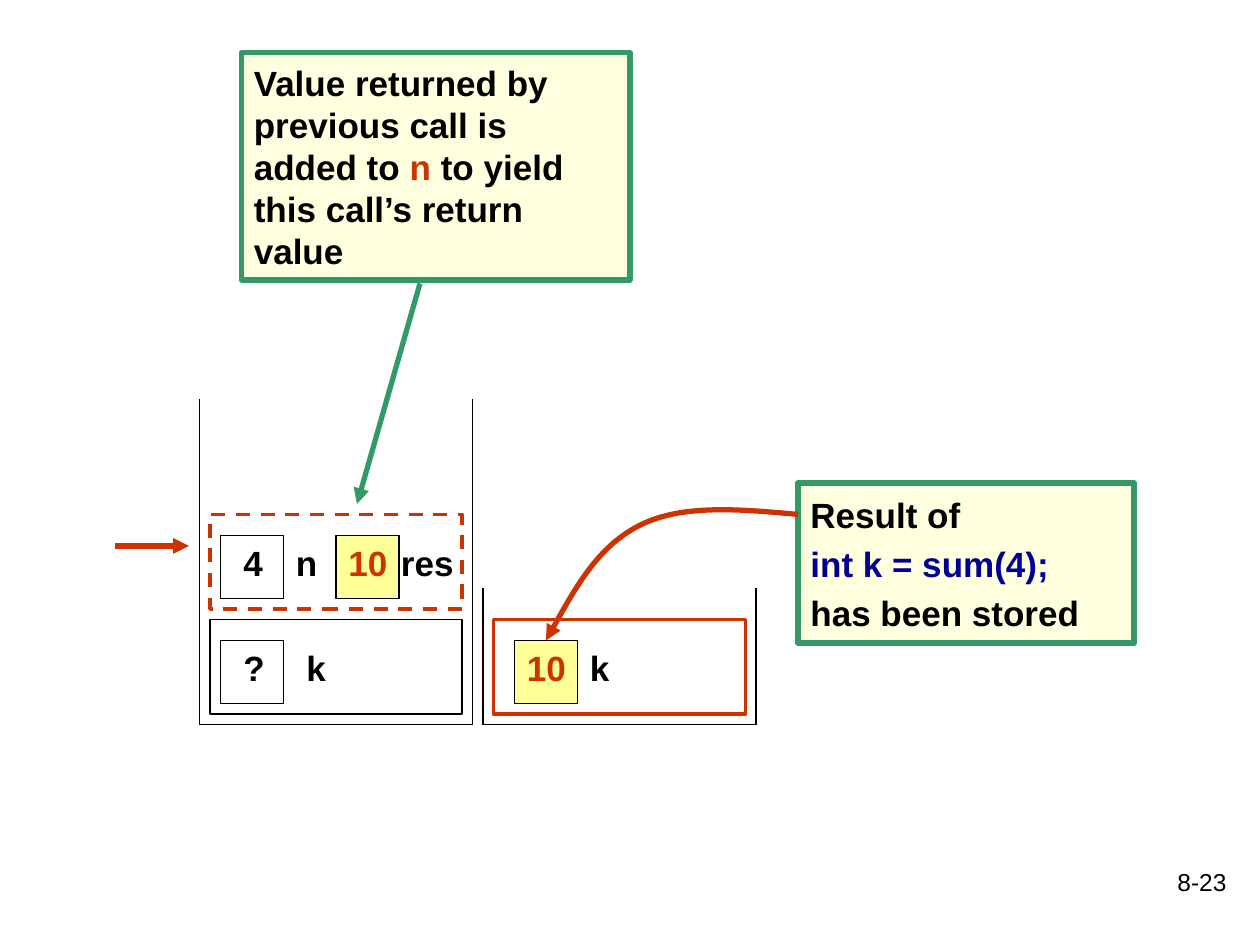
from lxml.etree import SubElement
from pptx import Presentation
from pptx.dml.color import RGBColor
from pptx.enum.dml import MSO_LINE
from pptx.enum.shapes import MSO_CONNECTOR, MSO_SHAPE
from pptx.enum.text import PP_ALIGN
from pptx.oxml.ns import qn
from pptx.util import Pt

BLACK = RGBColor(0x00, 0x00, 0x00)
RED = RGBColor(0xCC, 0x33, 0x00)
GREEN = RGBColor(0x33, 0x99, 0x66)
NAVY = RGBColor(0x00, 0x00, 0x99)
YELLOW = RGBColor(0xFF, 0xFF, 0x99)
CREAM = RGBColor(0xFF, 0xFF, 0xDF)

# All lengths are in points.
FLOOR, STACK_WIDTH = 414, 156
FRAME_WIDTH, FRAME_HEIGHT, GAP = 144, 54, 6
CELL, CELL_INSET, LABEL_HEIGHT = 36, 12, 31

# Each stack lists its frames from the bottom up; cells are (left, fill) and
# labels are (left, width, text, colour), with left measured from the frame.
STACKS = [
    {"left": 114, "top": 228, "frames": [
        {"line": (BLACK, 0.75, None),
         "cells": [(6, None)],
         "labels": [(12, 24, "?", BLACK), (48, 24, "k", BLACK)]},
        {"line": (RED, 2, MSO_LINE.DASH),
         "cells": [(6, None), (72, YELLOW)],
         "labels": [(12, 24, "4", BLACK), (42, 24, "n", BLACK),
                    (72, 48, "10", RED), (102, 48, "res", BLACK)]},
    ]},
    {"left": 276, "top": 336, "frames": [
        {"line": (RED, 2, None),
         "cells": [(12, YELLOW)],
         "labels": [(12, 42, "10", RED), (48, 30, "k", BLACK)]},
    ]},
]

# (box, space before each paragraph, paragraphs of (text, colour) runs)
CALLOUTS = [
    ((138, 30, 222, 130), 10, [
        [("Value returned by previous call is added to ", BLACK), ("n", RED),
         (" to yield this call’s return value", BLACK)]]),
    ((456, 276, 192, 91.5), 4, [
        [("Result of", BLACK)],
        [("int k = sum(4);", NAVY)],
        [("has been stored", BLACK)]]),
]

# (start, end, colour)
ARROWS = [((240, 162), (204, 288), GREEN), ((66, 312), (108, 312), RED)]
# Start point, then two control points and an end point per Bézier segment
RESULT_CURVE = [(456, 294), (423, 291), (390, 288), (366, 300),
                (342, 312), (327, 339), (312, 366)]

PAGE_NUMBER = "8-23"

prs = Presentation()
prs.slide_width, prs.slide_height = Pt(720), Pt(540)
slide = prs.slides.add_slide(prs.slide_layouts[6])
shapes = slide.shapes


def set_line(line, colour, width, dash=None, arrow=False):
    line.color.rgb = colour
    line.width = Pt(width)
    if dash:
        line.dash_style = dash
    if arrow:
        SubElement(line._get_or_add_ln(), qn("a:tailEnd"), type="triangle")


def add_rect(box, fill, *line):
    rect = shapes.add_shape(MSO_SHAPE.RECTANGLE, *map(Pt, box))
    rect.shadow.inherit = False
    if fill is None:
        rect.fill.background()
    else:
        rect.fill.solid()
        rect.fill.fore_color.rgb = fill
    set_line(rect.line, *line)
    return rect


def add_straight(start, end, colour, width, arrow=False):
    straight = shapes.add_connector(
        MSO_CONNECTOR.STRAIGHT, *map(Pt, start + end))
    SubElement(straight.element.spPr, qn("a:effectLst"))
    set_line(straight.line, colour, width, arrow=arrow)


def write(frame, paragraphs, size=20, bold=True, align=PP_ALIGN.LEFT, space=0):
    frame.word_wrap = True
    for index, runs in enumerate(paragraphs):
        paragraph = frame.add_paragraph() if index else frame.paragraphs[0]
        paragraph.alignment = align
        paragraph.space_before = Pt(space)
        for text, colour in runs:
            run = paragraph.add_run()
            run.text = text
            run.font.name = "Arial"
            run.font.size = Pt(size)
            run.font.bold = bold
            run.font.color.rgb = colour


def add_label(box, text, colour, **style):
    label = shapes.add_textbox(*map(Pt, box))
    write(label.text_frame, [[(text, colour)]], **style)


def add_curve(points, colour, width):
    """Draw a freeform whose points are grouped into cubic Bézier segments."""
    builder = shapes.build_freeform(*map(Pt, points[0]))
    builder.add_line_segments(
        [(Pt(x), Pt(y)) for x, y in points[1:]], close=False)
    curve = builder.convert_to_shape()
    curve.shadow.inherit = False
    curve.fill.background()
    set_line(curve.line, colour, width, arrow=True)
    outline = next(curve.element.iter(qn("a:path")))
    corners = outline.findall(qn("a:lnTo"))
    for first in range(0, len(corners), 3):
        segment = SubElement(outline, qn("a:cubicBezTo"))
        for corner in corners[first:first + 3]:
            segment.append(corner[0])
            outline.remove(corner)


add_label((558, 492, 150, 36), PAGE_NUMBER, BLACK,
          size=14, bold=False, align=PP_ALIGN.RIGHT)

for stack in STACKS:
    left, right = stack["left"], stack["left"] + STACK_WIDTH
    add_straight((left, FLOOR), (right, FLOOR), BLACK, 0.75)
    for wall in (left, right):
        add_straight((wall, FLOOR), (wall, stack["top"]), BLACK, 0.75)

    frame_left = left + GAP
    for level, frame in enumerate(stack["frames"], start=1):
        frame_top = FLOOR - level * (FRAME_HEIGHT + GAP)
        row_top = frame_top + CELL_INSET
        for offset, fill in frame["cells"]:
            add_rect((frame_left + offset, row_top, CELL, CELL),
                     fill, BLACK, 0.75)
        for offset, width, text, colour in frame["labels"]:
            add_label((frame_left + offset, row_top, width, LABEL_HEIGHT),
                      text, colour)
        add_rect((frame_left, frame_top, FRAME_WIDTH, FRAME_HEIGHT),
                 None, *frame["line"])

for box, space, paragraphs in CALLOUTS:
    callout = add_rect(box, CREAM, GREEN, 3)
    write(callout.text_frame, paragraphs, space=space)

for start, end, colour in ARROWS:
    add_straight(start, end, colour, 3, arrow=True)
add_curve(RESULT_CURVE, RED, 3)

prs.save("out.pptx")
